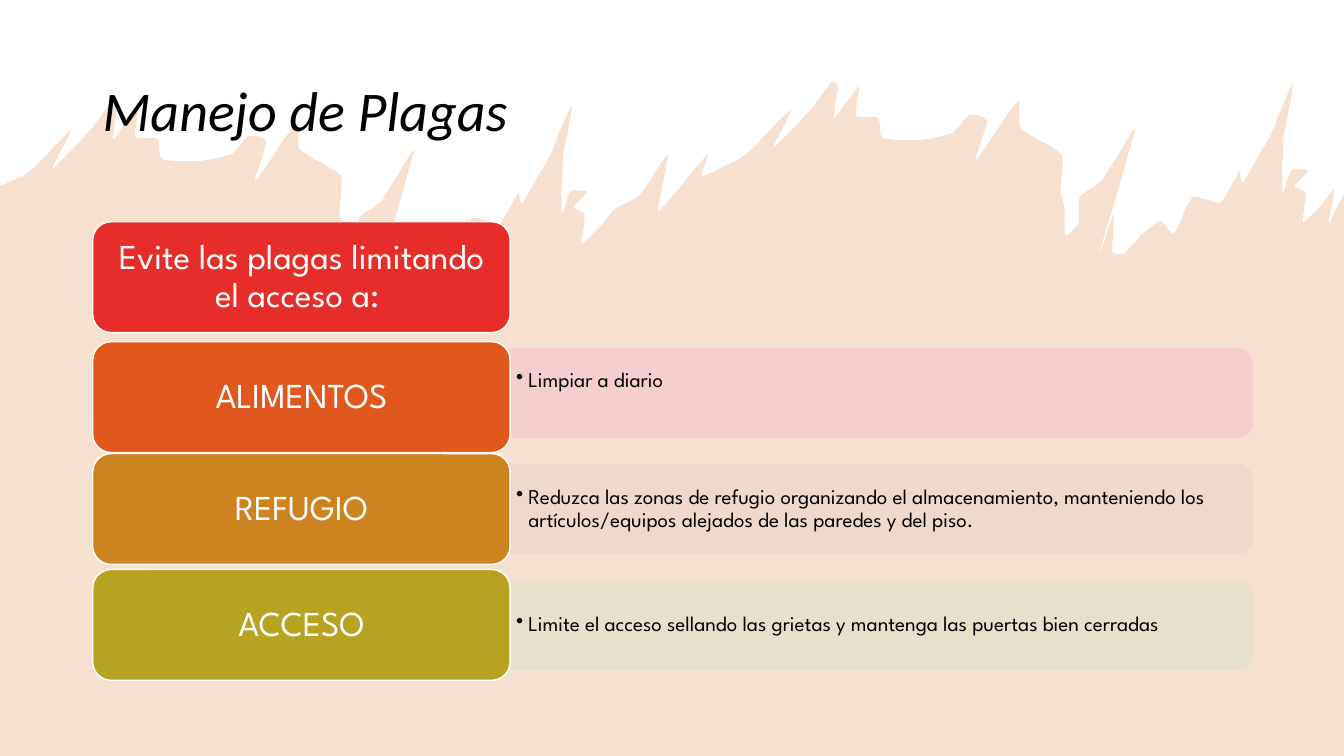
from collections import namedtuple
from lxml import etree
from pptx import Presentation
from pptx import util as u
from pptx.dml.color import RGBColor
from pptx.enum import shapes, text
from pptx.oxml import ns

PX = 9144
SLIDE_W, SLIDE_H = 1333, 750
TITLE_FONT, BODY_FONT = "Calibri", "League Spartan"
BLACK, WHITE, PEACH = "000000", "FFFFFF", "D56A17"

Row = namedtuple("Row", "name fill tint detail nudge lift", defaults=(0, 0))
HEADER = ("Evite las plagas limitando el acceso a: ", "E72D29")
ROWS = [
    Row("ALIMENTOS", "E0581E", "F6CDCD", "Limpiar a diario", nudge=4, lift=25),
    Row("REFUGIO", "CC8320", "EFD9CC",
        "Reduzca las zonas de refugio organizando el almacenamiento, manteniendo "
        "los artículos/equipos alejados de las paredes y del piso."),
    Row("ACCESO", "B8A221", "E6E0CD",
        "Limite el acceso sellando las grietas y mantenga las puertas bien cerradas"),
]

CREST = [(0, 0), (40, -41), (22, -2), (61, -42), (79, -67), (86, -63), (82, -31),
         (107, -64), (104, -34), (126, -32), (131, -12), (168, -10), (200, -17),
         (216, -35), (234, -30), (223, 10), (265, -49), (267, -22), (308, 4)]
DRIPS = [(307, 39), (311, 57), (312, 85), (325, 72), (326, 46), (348, 30),
         (381, -21), (346, 101), (360, 63), (358, 100), (370, 103), (385, 86),
         (406, 70), (419, 83), (438, 46), (466, 52), (484, 21), (488, 32)]
SPLASH = [(515, -15), (537, -66), (528, -10), (527, 42), (536, 20), (552, 20),
          (539, 36), (550, 43), (547, 72), (567, 53), (579, 38)]
STROKE = CREST + DRIPS + SPLASH
STROKE_STARTS = [(30, 170), (745, 149)]
BRIDGE = [(634, 194), (663, 153), (653, 210), (701, 154), (696, 175), (732, 158)]
CURVE_STEPS, TENSION = 5, 0.25


def rgb(value):
    """Turn a hex string into a colour."""
    return RGBColor.from_string(value)


def px(*lengths):
    """Turn px lengths into EMU."""
    return [n * PX for n in lengths]


def set_alpha(fill_parent, percent):
    """Give the solid fill inside an element an opacity."""
    color = fill_parent.find(ns.qn("a:solidFill"))[0]
    etree.SubElement(color, ns.qn("a:alpha"), val=str(percent * 1000))


def paint(s, fill, line=None):
    """Set the fill and the outline of a shape without shadow."""
    s.shadow.inherit = False
    s.fill.solid()
    s.fill.fore_color.rgb = rgb(fill)
    if line:
        s.line.color.rgb = rgb(line)
        s.line.width = u.Pt(1)
    else:
        s.line.fill.background()


def write(s, words, font, size, color, margins, align=text.PP_ALIGN.LEFT):
    """Put one middle-anchored paragraph in a shape and return it."""
    tf = s.text_frame
    tf.text = words
    tf.word_wrap = True
    tf.vertical_anchor = text.MSO_ANCHOR.MIDDLE
    tf.margin_left, tf.margin_top, tf.margin_right, tf.margin_bottom = px(*margins)
    p = tf.paragraphs[0]
    p.alignment = align
    p.line_spacing = 0.9
    r = p.runs[0]
    r.font.name = font
    r.font.size = u.Pt(size)
    r.font.color.rgb = rgb(color)
    return p


def shift(points, dx, dy):
    """Move points by an offset."""
    return [(x + dx, y + dy) for x, y in points]


def hermite(start, end, start_slope, end_slope, t):
    """Return the value at t on a cubic between two values."""
    return ((2 * t**3 - 3 * t**2 + 1) * start + (t**3 - 2 * t**2 + t) * start_slope
            + (3 * t**2 - 2 * t**3) * end + (t**3 - t**2) * end_slope)


def smooth(turns):
    """Run a cardinal spline through the turning points."""
    padded = [turns[0], *turns, turns[-1]]
    curve = []
    for before, a, b, after in zip(padded, padded[1:], padded[2:], padded[3:]):
        for step in range(CURVE_STEPS):
            curve.append(tuple(
                hermite(a[k], b[k], TENSION * (b[k] - before[k]),
                        TENSION * (after[k] - a[k]), step / CURVE_STEPS)
                for k in (0, 1)))
    return curve + [turns[-1]]


def add_brush(slide, x, y, w, h):
    """Draw a torn edge of two equal strokes and fill the box below it."""
    first, second = [shift(STROKE, *start) for start in STROKE_STARTS]
    turns = [(0, 184), *first, *BRIDGE, *second, (1318, 221), (w, 193)]
    outline = shift(smooth(turns) + [(w, h), (0, h)], x, y)
    builder = slide.shapes.build_freeform(*outline[0], scale=PX)
    builder.add_line_segments(outline[1:], close=True)
    s = builder.convert_to_shape()
    paint(s, PEACH)
    set_alpha(s.element.spPr, 20)


def add_title(slide, x, y, w, h):
    """Write the slide title in its box."""
    s = slide.shapes.add_textbox(*px(x, y, w, h))
    p = write(s, "Manejo de Plagas", TITLE_FONT, 40, BLACK, (10, 5, 10, 5))
    p.runs[0].font.italic = True


def add_label(slide, words, fill, x, y, w, h):
    """Draw a rounded label with centred text."""
    s = slide.shapes.add_shape(shapes.MSO_SHAPE.ROUNDED_RECTANGLE, *px(x, y, w, h))
    paint(s, fill, WHITE)
    write(s, words, BODY_FONT, 25, WHITE, (10, 5, 10, 5), text.PP_ALIGN.CENTER)


def add_panel(slide, fill, x, y, w, h):
    """Draw a panel rounded on the right by turning a top-rounded shape."""
    left, top = x + (w - h) // 2, y + (h - w) // 2
    s = slide.shapes.add_shape(
        shapes.MSO_SHAPE.ROUND_2_SAME_RECTANGLE, *px(left, top, h, w))
    s.rotation = 90
    paint(s, fill, fill)
    for fill_parent in (s.element.spPr, s.element.spPr.find(ns.qn("a:ln"))):
        set_alpha(fill_parent, 90)


def add_bullet_text(slide, words, lift, x, y, w, h):
    """Write a bulleted text, raised by half of the lift."""
    indent = 12 * PX
    s = slide.shapes.add_textbox(*px(x, y, w, h))
    p = write(s, words, BODY_FONT, 15, BLACK, (6, 3, 6, 3 + lift))
    pPr = p._p.get_or_add_pPr()
    pPr.set("marL", str(indent))
    pPr.set("indent", str(-indent))
    etree.SubElement(pPr, ns.qn("a:buChar"), char="•")


def add_pest_list(slide, x, y, w, h):
    """Stack the header label and the rows of label and detail."""
    label_w, label_h, panel_h = 414, 110, 88
    panel_x, panel_w = x + label_w, w - label_w
    pitch = (h - label_h) // len(ROWS)
    add_label(slide, *HEADER, x, y, label_w, label_h)
    for i, row in enumerate(ROWS, 1):
        top = y + i * pitch
        panel_y = top + (label_h - panel_h) // 2
        add_panel(slide, row.tint, panel_x, panel_y, panel_w, panel_h)
        add_bullet_text(slide, row.detail, row.lift,
                        panel_x, panel_y + 4, panel_w - 4, panel_h - 8)
        add_label(slide, row.name, row.fill, x, top + row.nudge, label_w, label_h)


def main():
    """Build the slide and save it."""
    prs = Presentation()
    prs.slide_width, prs.slide_height = px(SLIDE_W, SLIDE_H)
    slide = prs.slides.add_slide(prs.slide_layouts[6])
    add_brush(slide, 0, 0, SLIDE_W, SLIDE_H)
    add_title(slide, 92, 40, 1150, 145)
    add_pest_list(slide, 92, 220, 1150, 455)
    prs.save("out.pptx")


if __name__ == "__main__":
    main()
